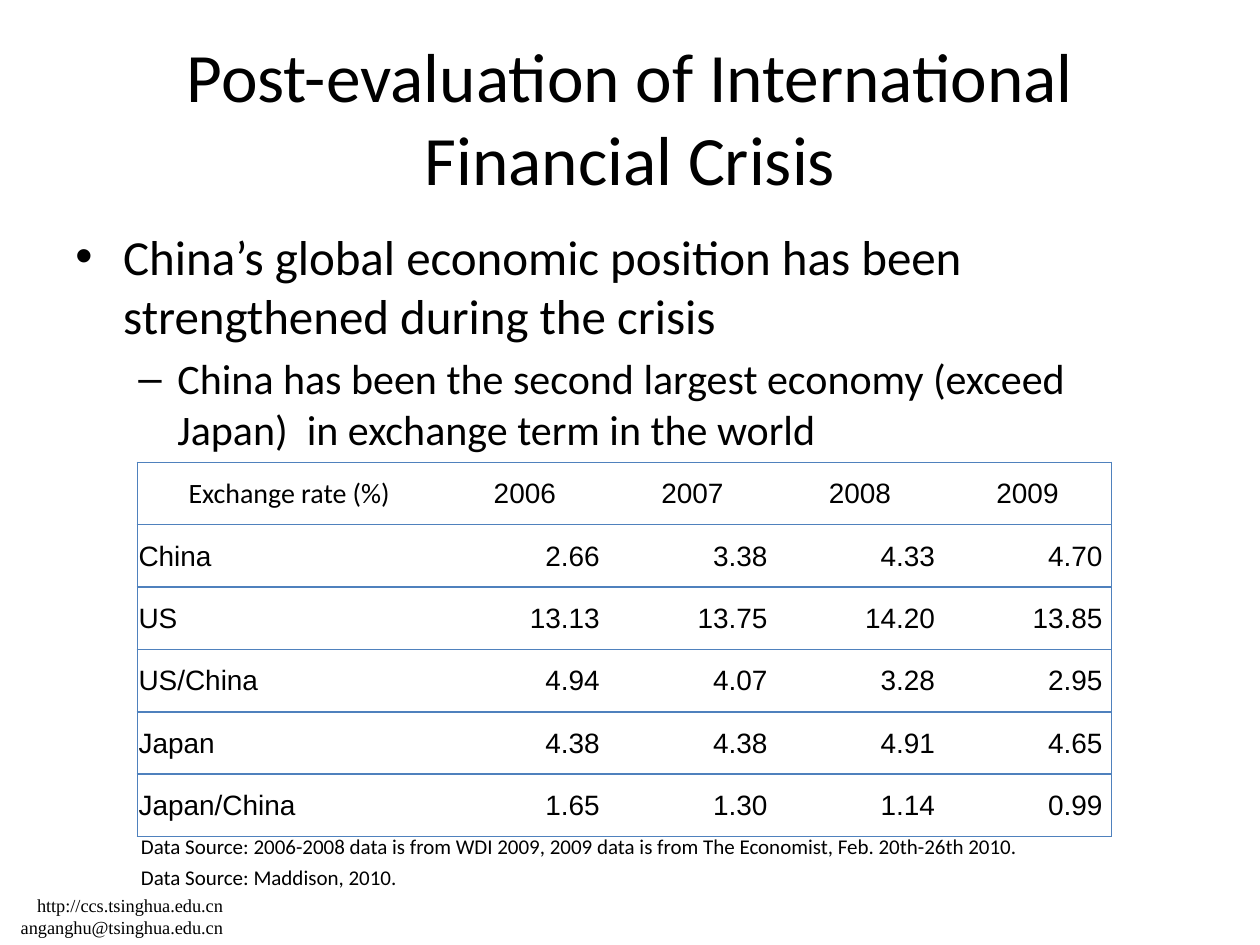
from collections import namedtuple

from lxml import etree
from pptx import Presentation
from pptx.dml.color import RGBColor
from pptx.enum.text import MSO_ANCHOR, MSO_AUTO_SIZE, PP_ALIGN
from pptx.oxml.ns import qn
from pptx.util import Inches, Pt

BLACK = RGBColor(0x00, 0x00, 0x00)
WHITE = RGBColor(0xFF, 0xFF, 0xFF)
BLUE = RGBColor(0x4F, 0x81, 0xBD)
LEFT, CENTER, RIGHT = PP_ALIGN.LEFT, PP_ALIGN.CENTER, PP_ALIGN.RIGHT
MIDDLE, TOP = MSO_ANCHOR.MIDDLE, MSO_ANCHOR.TOP
NO_FIT = MSO_AUTO_SIZE.NONE
PAGE_WIDTH, PAGE_HEIGHT = 10, 7.5

Box = namedtuple("Box", "left top width height")

TITLE = "Post-evaluation of International Financial Crisis"
# Text, size, bullet, left indent, hanging indent
POINTS = [
    ("China’s global economic position has been strengthened during the crisis",
     28, "•", 0.38, -0.38),
    ("China has been the second largest economy (exceed Japan)  in exchange "
     "term in the world", 24, "–", 0.81, -0.31),
]
RATES = [
    ("Exchange rate (%)", "2006", "2007", "2008", "2009"),
    ("China", "2.66", "3.38", "4.33", "4.70"),
    ("US", "13.13", "13.75", "14.20", "13.85"),
    ("US/China", "4.94", "4.07", "3.28", "2.95"),
    ("Japan", "4.38", "4.38", "4.91", "4.65"),
    ("Japan/China", "1.65", "1.30", "1.14", "0.99"),
]
SOURCES = [
    "Data Source: 2006-2008 data is from WDI 2009, 2009 data is from "
    "The Economist, Feb. 20th-26th 2010.",
    "Data Source: Maddison, 2010.",
]
CONTACTS = ["http://ccs.tsinghua.edu.cn", "anganghu@tsinghua.edu.cn"]


def share_box(left, top, width, height):
    """Box from shares of the slide's width and height."""
    return Box(Inches(left * PAGE_WIDTH), Inches(top * PAGE_HEIGHT),
               Inches(width * PAGE_WIDTH), Inches(height * PAGE_HEIGHT))


def add_span(para, text, size, font="Calibri", align=LEFT):
    para.alignment = align
    span = para.add_run()
    span.text = text
    span.font.size = Pt(size)
    span.font.name = font
    span.font.color.rgb = BLACK


def add_text_frame(page, box):
    frame = page.shapes.add_textbox(*box).text_frame
    frame.word_wrap = True
    frame.auto_size = NO_FIT
    frame.vertical_anchor = TOP
    return frame


def next_para(frame, index):
    return frame.paragraphs[0] if index == 0 else frame.add_paragraph()


def place_title(page, box):
    title = page.shapes.title
    title.left, title.top, title.width, title.height = box
    frame = title.text_frame
    frame.word_wrap = True
    frame.auto_size = NO_FIT
    frame.vertical_anchor = MIDDLE
    add_span(frame.paragraphs[0], TITLE, 39.6, align=CENTER)


def place_points(page, box):
    frame = add_text_frame(page, box)
    for index, (text, size, mark, indent, hanging) in enumerate(POINTS):
        para = next_para(frame, index)
        para.level = index
        props = para._p.get_or_add_pPr()
        props.set("marL", str(Inches(indent)))
        props.set("indent", str(Inches(hanging)))
        etree.SubElement(props, qn("a:buFont")).set("typeface", "Arial")
        etree.SubElement(props, qn("a:buChar")).set("char", mark)
        if index:
            para.space_before = Pt(size * 0.2)
        add_span(para, text, size)


def set_borders(cell, blue_sides):
    props = cell._tc.get_or_add_tcPr()
    for index, side in enumerate("LRTB"):
        line = etree.Element(qn(f"a:ln{side}"), w=str(Pt(1)))
        if side in blue_sides:
            fill = etree.SubElement(line, qn("a:solidFill"))
            etree.SubElement(fill, qn("a:srgbClr")).set("val", str(BLUE))
        else:
            etree.SubElement(line, qn("a:noFill"))
        props.insert(index, line)


def place_table(page, box):
    row_count, column_count = len(RATES), len(RATES[0])
    table = page.shapes.add_table(row_count, column_count, *box).table
    table.first_row = table.horz_banding = False
    # Wide label column, then equal year columns
    label_width = Inches(2.41)
    year_width = (box.width - label_width) // (column_count - 1)
    for index, column in enumerate(table.columns):
        column.width = year_width if index else label_width
    for row in table.rows:
        row.height = box.height // row_count

    for r, values in enumerate(RATES):
        for c, text in enumerate(values):
            cell = table.cell(r, c)
            is_number = r > 0 and c > 0
            cell.margin_left = cell.margin_top = Inches(0.01)
            cell.margin_right = Inches(0.07 if is_number else 0.01)
            cell.margin_bottom = 0
            cell.vertical_anchor = MIDDLE
            cell.fill.solid()
            cell.fill.fore_color.rgb = WHITE
            sides = "TB" + ("L" if c == 0 else "")
            sides += "R" if c == column_count - 1 else ""
            set_borders(cell, sides)
            align = CENTER if r == 0 else RIGHT if is_number else LEFT
            font = "Calibri" if r == c == 0 else "Arial"
            add_span(cell.text_frame.paragraphs[0], text, 16, font, align)


def place_source(page, box, text):
    add_span(add_text_frame(page, box).paragraphs[0], text, 12)


def place_contacts(page, box):
    frame = add_text_frame(page, box)
    for index, text in enumerate(CONTACTS):
        add_span(next_para(frame, index), text, 10.5, "Times New Roman", RIGHT)


def main():
    deck = Presentation()
    deck.slide_width, deck.slide_height = Inches(PAGE_WIDTH), Inches(PAGE_HEIGHT)
    page = deck.slides.add_slide(deck.slide_layouts[5])

    # Contact lines in the lower left corner
    place_contacts(page, share_box(-0.008, 0.94, 0.195, 0.06))
    # Heading and bullet points
    place_title(page, share_box(0.05, 0.04, 0.9, 1 / 6))
    place_points(page, share_box(0.05, 0.2333, 0.9, 0.66))
    # Exchange rate table with its sources below
    place_table(page, share_box(0.109, 0.4893, 0.773, 0.396))
    for index, text in enumerate(SOURCES):
        place_source(page, share_box(0.102, 0.876 + index * 0.032, 0.758, 0.04), text)

    deck.save("out.pptx")


if __name__ == "__main__":
    main()
